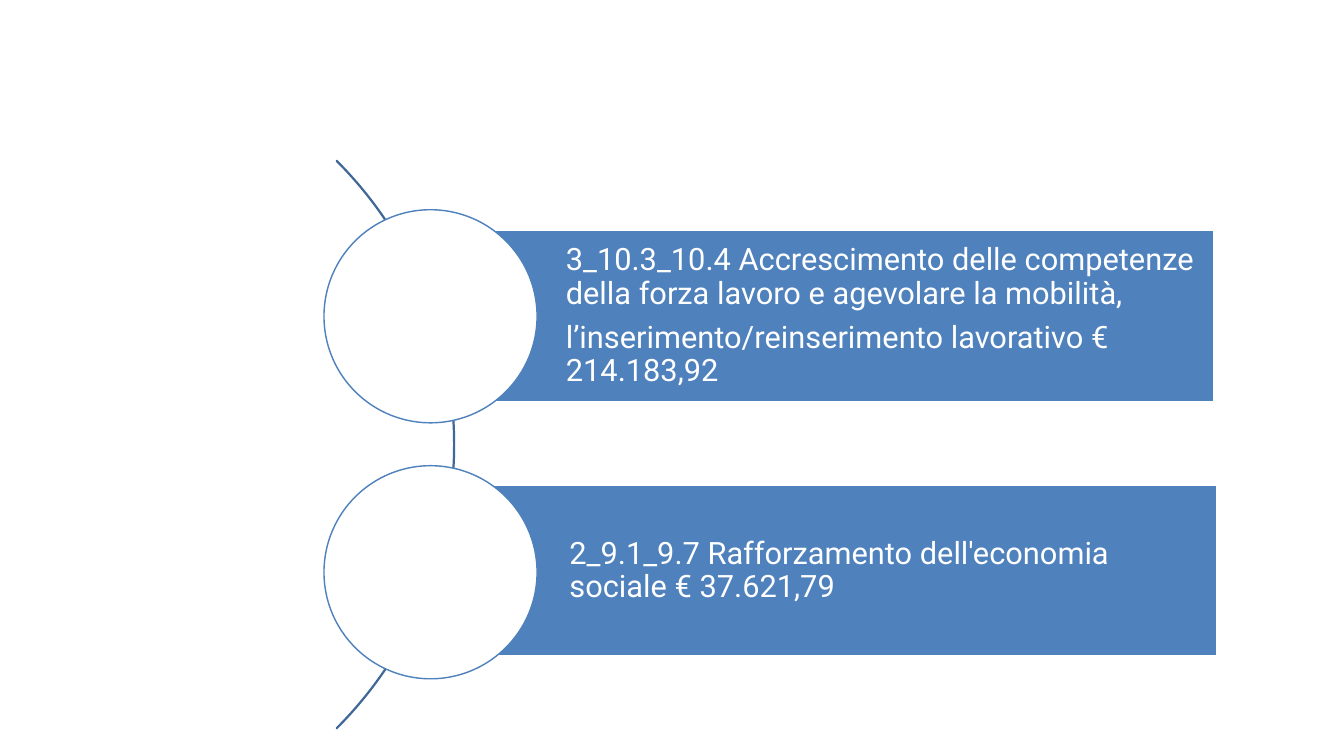
from pptx import Presentation
from pptx.dml.color import RGBColor
from pptx.enum.shapes import MSO_SHAPE
from pptx.enum.text import MSO_ANCHOR, PP_ALIGN
from pptx.util import Cm, Pt

BLUE, DARK_BLUE, WHITE = "4F81BD", "3F6797", "FFFFFF"
CIRCLE_LEFT, CIRCLE_SIZE = 16.33, 10.74
BAR_WIDTH, BAR_HEIGHT = 39.47, 8.61

FRAME = {
    "word_wrap": True,
    "vertical_anchor": MSO_ANCHOR.MIDDLE,
    "margin_left": Cm(6.83),
    "margin_top": Cm(0.3),
    "margin_right": Cm(0.3),
    "margin_bottom": Cm(0.3),
}
PARAGRAPH = {
    "alignment": PP_ALIGN.LEFT,
    "line_spacing": 0.9,
    "space_after": Pt(15.4),
}
FONT = {"name": "Roboto", "size": Pt(44)}

OBJECTIVES = [
    (21.69, 11.63, 10.57, [
        "3_10.3_10.4 Accrescimento delle competenze della forza lavoro e agevolare la mobilità,",
        "l’inserimento/reinserimento lavorativo € 214.183,92",
    ]),
    (21.87, 24.46, 23.47, [
        "2_9.1_9.7 Rafforzamento dell'economia sociale € 37.621,79",
    ]),
]


def paint(color_format, value):
    color_format.rgb = RGBColor.from_string(value)


def set_format(target, values):
    for name, value in values.items():
        setattr(target, name, value)


def add_shape(shapes, kind, box, line, fill=None):
    sp = shapes.add_shape(kind, *(Cm(v) for v in box))
    sp.shadow.inherit = False
    if fill:
        sp.fill.solid()
        paint(sp.fill.fore_color, fill)
    else:
        sp.fill.background()
    sp.line.width = Pt(2)
    paint(sp.line.color, line)
    return sp


def add_arc(shapes):
    arc = add_shape(shapes, MSO_SHAPE.BLOCK_ARC, (-17.58, 2.16, 40.49, 40.49), DARK_BLUE)
    for i, value in enumerate((189, 27, 0.001)):
        arc.adjustments[i] = value


def add_bar(shapes, left, top, lines):
    box = (left, top, BAR_WIDTH, BAR_HEIGHT)
    tf = add_shape(shapes, MSO_SHAPE.RECTANGLE, box, WHITE, BLUE).text_frame
    set_format(tf, FRAME)
    for i, line in enumerate(lines):
        p = tf.add_paragraph() if i else tf.paragraphs[0]
        set_format(p, PARAGRAPH)
        r = p.add_run()
        r.text = line
        set_format(r.font, FONT)
        paint(r.font.color, WHITE)


def add_circle(shapes, top):
    box = (CIRCLE_LEFT, top, CIRCLE_SIZE, CIRCLE_SIZE)
    add_shape(shapes, MSO_SHAPE.OVAL, box, BLUE, WHITE)


def main():
    prs = Presentation()
    prs.slide_width, prs.slide_height = Cm(67.74), Cm(38.1)
    s = prs.slides.add_slide(prs.slide_layouts[6])
    shapes = s.shapes.add_group_shape().shapes
    add_arc(shapes)
    for left, bar_top, circle_top, lines in OBJECTIVES:
        add_bar(shapes, left, bar_top, lines)
        add_circle(shapes, circle_top)
    prs.save("out.pptx")


if __name__ == "__main__":
    main()
